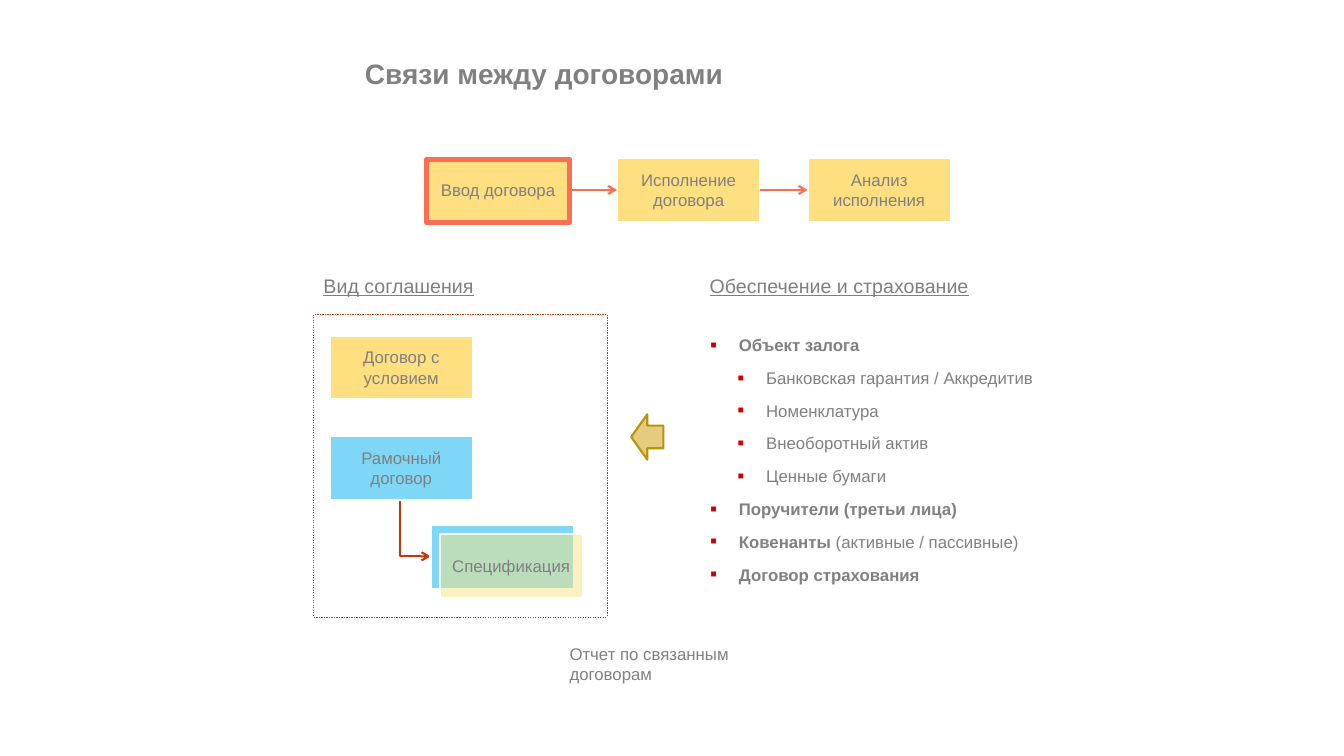
from dataclasses import dataclass

from lxml import etree
from pptx import Presentation
from pptx.dml.color import RGBColor
from pptx.enum.dml import MSO_LINE
from pptx.enum.shapes import MSO_CONNECTOR as CONN, MSO_SHAPE as SHAPE
from pptx.enum.text import MSO_ANCHOR as ANCHOR, PP_ALIGN as ALIGN
from pptx.oxml.ns import qn
from pptx.util import Inches, Pt


@dataclass(frozen=True)
class Theme:
    font: str = "Arial"
    title_size: int = 20
    heading_size: int = 14
    body_size: int = 12
    title: str = "808080"
    text: str = "7F7F7F"
    white: str = "FFFFFF"
    yellow: str = "FFC000"
    pale: str = "F9E383"
    blue: str = "00B0F0"
    coral: str = "FC6E51"
    red: str = "CC3300"
    bullet: str = "CC0000"
    gold: str = "CC9900"
    gold_line: str = "B59509"


T = Theme()
BOX_W, BOX_H = 1.42, 0.63
FLOW_X, FLOW_Y, FLOW_STEP = 4.23, 1.57, 1.89
FLOW = ["Ввод договора", "Исполнение договора", "Анализ исполнения"]
SECURITY = [
    (0, [("Объект залога", True)]),
    (1, [("Банковская гарантия / Аккредитив", False)]),
    (1, [("Номенклатура", False)]),
    (1, [("Внеоборотный актив", False)]),
    (1, [("Ценные бумаги", False)]),
    (0, [("Поручители (третьи лица)", True)]),
    (0, [("Ковенанты ", True), ("(активные / пассивные)", False)]),
    (0, [("Договор страхования", True)]),
]


def rgb(color):
    return RGBColor.from_string(color)


def add_run(p, text, size, color, bold=False, underline=False):
    r = p.add_run()
    r.text = text
    r.font.name = T.font
    r.font.size = Pt(size)
    r.font.bold = bold
    r.font.underline = underline
    r.font.color.rgb = rgb(color)


def add_panel(s, x, y, w, h, fill, line, width, alpha=50, kind=SHAPE.RECTANGLE):
    sp = s.shapes.add_shape(kind, Inches(x), Inches(y), Inches(w), Inches(h))
    sp.shadow.inherit = False
    if fill:
        sp.fill.solid()
        sp.fill.fore_color.rgb = rgb(fill)
        clr = sp.fill._xPr.find(qn("a:solidFill"))[0]
        etree.SubElement(clr, qn("a:alpha"), val=str(alpha * 1000))
    else:
        sp.fill.background()
    sp.line.color.rgb = rgb(line)
    sp.line.width = Pt(width)
    sp.text_frame.word_wrap = True
    return sp


def add_box(s, x, y, fill, text=""):
    sp = add_panel(s, x, y, BOX_W, BOX_H, fill, T.white, 1.5)
    if text:
        tf = sp.text_frame
        tf.vertical_anchor = ANCHOR.MIDDLE
        p = tf.paragraphs[0]
        p.alignment = ALIGN.CENTER
        add_run(p, text, T.body_size, T.text)


def add_arrow(s, kind, x1, y1, x2, y2, color):
    c = s.shapes.add_connector(kind, Inches(x1), Inches(y1), Inches(x2), Inches(y2))
    c.line.color.rgb = rgb(color)
    c.line.width = Pt(1.5)
    etree.SubElement(c.line._get_or_add_ln(), qn("a:tailEnd"), type="arrow")
    etree.SubElement(c._element.spPr, qn("a:effectLst"))
    return c


def add_corner_arrow(s):
    c = add_arrow(s, CONN.ELBOW, 4.4, 5.09, 3.84, 5.39, T.red)
    spPr = c._element.spPr
    spPr.find(qn("a:xfrm")).set("rot", "16200000")
    spPr.find(qn("a:prstGeom")).set("prst", "bentConnector2")


def add_heading(s, x, text):
    sp = s.shapes.add_textbox(Inches(x), Inches(2.67), Inches(2.91), Inches(0.34))
    tf = sp.text_frame
    tf.word_wrap = True
    add_run(tf.paragraphs[0], text, T.heading_size, T.text, underline=True)


def add_bullet(p, level):
    p.level = level
    pPr = p._p.get_or_add_pPr()
    pPr.set("marL", str(Inches(0.28 + 0.27 * level)))
    pPr.set("indent", str(Inches(-0.28)))
    clr = etree.SubElement(pPr, qn("a:buClr"))
    etree.SubElement(clr, qn("a:srgbClr"), val=T.bullet)
    etree.SubElement(pPr, qn("a:buSzPct"), val="60000")
    etree.SubElement(pPr, qn("a:buFont"), typeface=T.font)
    etree.SubElement(pPr, qn("a:buChar"), char="■")


def add_bullet_list(s, items):
    sp = add_panel(s, 6.95, 3.01, 3.81, 3.1, T.white, T.white, 0.25, 30)
    tf = sp.text_frame
    tf.vertical_anchor = ANCHOR.MIDDLE
    for i, (level, runs) in enumerate(items):
        p = tf.add_paragraph() if i else tf.paragraphs[0]
        p.alignment = ALIGN.LEFT
        if i:
            p.space_before = Pt(9)
        add_bullet(p, level)
        for text, bold in runs:
            add_run(p, text, T.body_size, T.title, bold)


def add_title(s, text):
    sp = s.shapes.title
    sp.left, sp.top = Inches(3.52), Inches(0.17)
    sp.width, sp.height = Inches(7.53), Inches(1.18)
    tf = sp.text_frame
    tf.vertical_anchor = ANCHOR.MIDDLE
    p = tf.paragraphs[0]
    p.alignment = ALIGN.LEFT
    p.line_spacing = 0.8
    add_run(p, text, T.title_size, T.title, bold=True)


def add_flow(s):
    for i, text in enumerate(FLOW):
        x = FLOW_X + i * FLOW_STEP
        add_box(s, x, FLOW_Y, T.yellow, text)
        if i:
            y = FLOW_Y + BOX_H / 2
            add_arrow(s, CONN.STRAIGHT, x - FLOW_STEP + BOX_W, y, x, y, T.coral)
    add_panel(s, FLOW_X, FLOW_Y + 0.01, BOX_W, BOX_H, None, T.coral, 3.5)


def add_agreements(s):
    add_heading(s, 3.11, "Вид соглашения")
    frame = add_panel(s, 3.11, 3.12, 2.91, 3, None, T.red, 0.25)
    frame.line.dash_style = MSO_LINE.DASH
    add_box(s, 3.27, 3.33, T.yellow, "Договор с условием")
    add_corner_arrow(s)
    add_box(s, 4.27, 5.21, T.blue)
    add_box(s, 4.36, 5.3, T.pale, "Спецификация")
    add_box(s, 3.27, 4.33, T.blue, "Рамочный договор")


def add_report_note(s):
    sp = add_panel(s, 5.55, 6.34, 2.39, 0.56, T.white, T.white, 0.25, 30)
    tf = sp.text_frame
    tf.vertical_anchor = ANCHOR.TOP
    p = tf.paragraphs[0]
    p.alignment = ALIGN.LEFT
    add_run(p, "Отчет по связанным договорам", T.body_size, T.title)


def main():
    prs = Presentation()
    prs.slide_width, prs.slide_height = Inches(13.33), Inches(7.5)
    s = prs.slides.add_slide(prs.slide_layouts[5])
    add_title(s, "Связи между договорами")
    add_flow(s)
    add_agreements(s)
    add_bullet_list(s, SECURITY)
    add_heading(s, 6.94, "Обеспечение и страхование")
    add_panel(s, 6.26, 4.11, 0.32, 0.45, T.gold, T.gold_line, 1.5, kind=SHAPE.LEFT_ARROW)
    add_report_note(s)
    prs.save("out.pptx")


if __name__ == "__main__":
    main()
